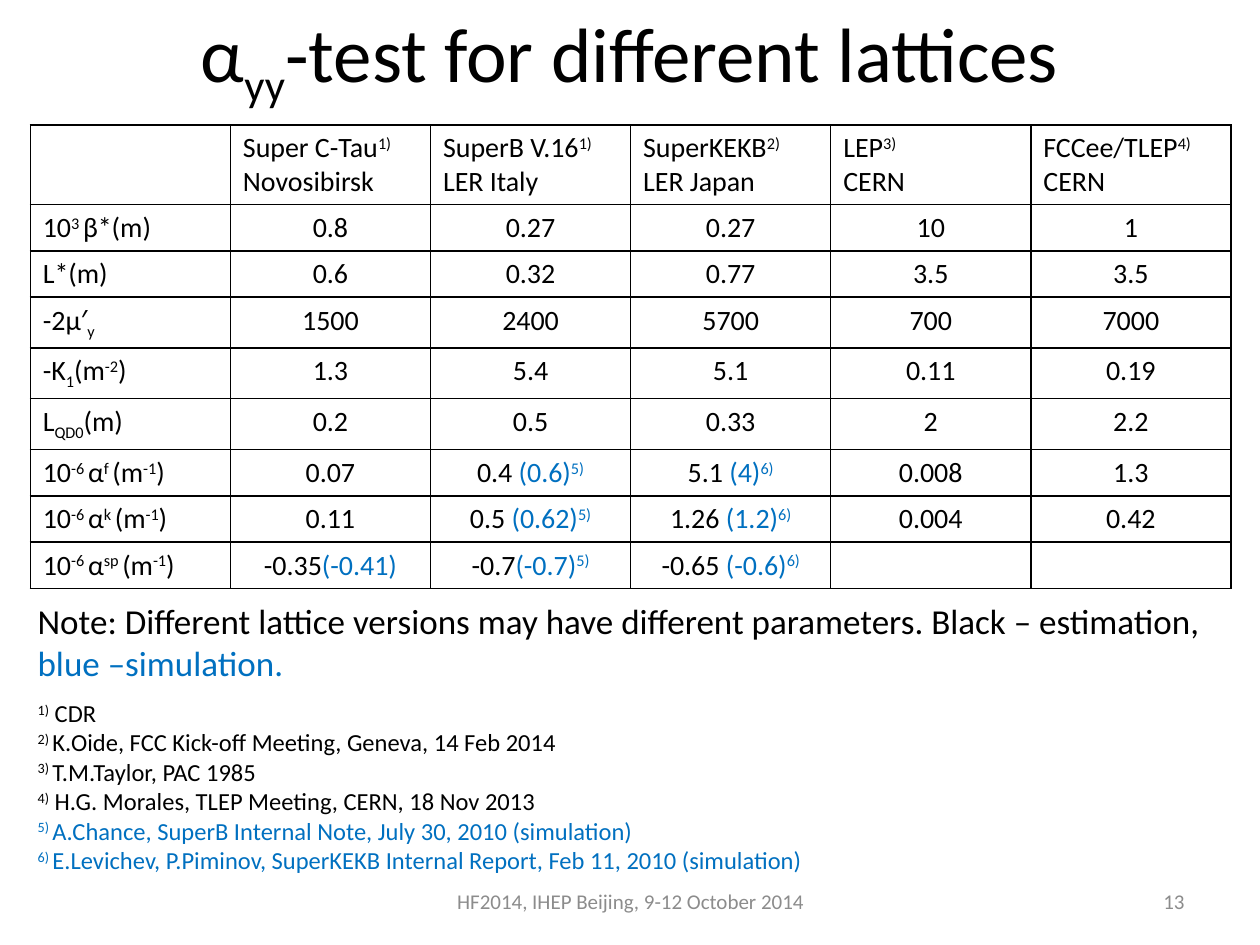
from dataclasses import dataclass
from lxml.etree import SubElement
from pptx import Presentation
from pptx.dml.color import RGBColor
from pptx.enum.text import MSO_ANCHOR, PP_ALIGN
from pptx.oxml.ns import qn
from pptx.slide import Slide
from pptx.util import Inches, Pt

BLACK = RGBColor(0x00, 0x00, 0x00)
WHITE = RGBColor(0xFF, 0xFF, 0xFF)
BLUE = RGBColor(0x00, 0x70, 0xC0)
GREY = RGBColor(0x8C, 0x8C, 0x8C)
BASELINES = {"^": "30000", "_": "-25000"}


@dataclass
class LatticeSlide:
    """Draws text where | splits runs, ~ is blue, ^ is raised and _ is lowered."""

    slide: Slide
    font: str = "Calibri"

    def fill_text(self, frame, lines, size, color=BLACK, align=PP_ALIGN.LEFT):
        for index, line in enumerate(lines):
            paragraph = frame.paragraphs[0] if index == 0 else frame.add_paragraph()
            paragraph.alignment = align
            paragraph.font.size = Pt(size)
            for part in filter(None, line.split("|")):
                ink = BLUE if part.startswith("~") else color
                part = part.removeprefix("~")
                baseline = BASELINES.get(part[0])
                run = paragraph.add_run()
                run.text = part[1:] if baseline else part
                style = {"name": self.font, "size": Pt(size)}
                for key, value in style.items():
                    setattr(run.font, key, value)
                run.font.color.rgb = ink
                if baseline:
                    run.font._element.set("baseline", baseline)

    def text(self, box, lines, size, color=BLACK, align=PP_ALIGN.LEFT, anchor=MSO_ANCHOR.TOP):
        frame = self.slide.shapes.add_textbox(*map(Inches, box)).text_frame
        for key, value in {"word_wrap": True, "vertical_anchor": anchor}.items():
            setattr(frame, key, value)
        self.fill_text(frame, lines, size, color, align)

    def border(self, cell):
        properties = cell._tc.get_or_add_tcPr()
        for side in ("a:lnL", "a:lnR", "a:lnT", "a:lnB"):
            line = SubElement(properties, qn(side), w=str(Pt(1)))
            fill = SubElement(line, qn("a:solidFill"))
            SubElement(fill, qn("a:srgbClr"), val=str(BLACK))

    def table(self, box, rows, heights, size):
        grid = self.slide.shapes.add_table(len(rows), len(rows[0]), *map(Inches, box)).table
        for key in ("first_row", "horz_banding"):
            setattr(grid, key, False)
        for r, (row, height) in enumerate(zip(rows, heights)):
            grid.rows[r].height = Inches(height)
            for c, content in enumerate(row):
                cell = grid.cell(r, c)
                align = PP_ALIGN.CENTER if r and c else PP_ALIGN.LEFT
                self.border(cell)
                cell.fill.solid()
                cell.fill.fore_color.rgb = WHITE
                self.fill_text(cell.text_frame, content.split("\n"), size, align=align)


HEADINGS = ["", "Super C-Tau|^1)\nNovosibirsk", "SuperB V.16|^1)\nLER Italy",
            "SuperKEKB|^2)\nLER Japan", "LEP|^3)\nCERN", "FCCee/TLEP|^4)\nCERN"]
PARAMETERS = [
    ["10|^3 |β*(m)", "0.8", "0.27", "0.27", "10", "1"],
    ["L*(m)", "0.6", "0.32", "0.77", "3.5", "3.5"],
    ["-2μ′|_y", "1500", "2400", "5700", "700", "7000"],
    ["-K|_1|(m|^-2|)", "1.3", "5.4", "5.1", "0.11", "0.19"],
    ["L|_QD0|(m)", "0.2", "0.5", "0.33", "2", "2.2"],
]
COEFFICIENTS = {
    "f": ["0.07", "0.4 |~(0.6)|~^5)", "5.1 |~(4)|~^6)", "0.008", "1.3"],
    "k": ["0.11", "0.5 |~(0.62)|~^5)", "1.26 |~(1.2)|~^6)", "0.004", "0.42"],
    "sp": ["-0.35|~(-0.41)", "-0.7|~(-0.7)|~^5)", "-0.65 |~(-0.6)|~^6)", "", ""],
}
ALPHA_ROWS = [[f"10|^-6 |α|^{name} |(m|^-1|)", *values] for name, values in COEFFICIENTS.items()]
ROW_HEIGHTS = [0.63] + [0.36] * 2 + [0.4] * 3 + [0.36] * 3
REFERENCES = [
    "|^1)| CDR",
    "|^2) |K.Oide, FCC Kick-off Meeting, Geneva, 14 Feb 2014",
    "|^3) |T.M.Taylor, PAC 1985",
    "|^4)| H.G. Morales, TLEP Meeting, CERN, 18 Nov 2013",
    "|~^5) |~A.Chance, SuperB Internal Note, July 30, 2010 (simulation)",
    "|~^6) |~E.Levichev, P.Piminov, SuperKEKB Internal Report, Feb 11, 2010 (simulation)",
]
NOTE = ("Note: Different lattice versions may have different parameters. "
        "Black – estimation, |~blue –simulation.")

deck = Presentation()
deck.slide_width, deck.slide_height = Inches(10), Inches(7.5)
page = LatticeSlide(deck.slides.add_slide(deck.slide_layouts[6]))
page.text((0.5, 0, 9, 0.92), ["α|_yy|-test for different lattices"], 44,
          align=PP_ALIGN.CENTER, anchor=MSO_ANCHOR.MIDDLE)
page.text((0.2, 5.49, 6.75, 1.51), REFERENCES, 14)
page.text((0.2, 4.71, 9.61, 0.77), [NOTE], 20)
page.table((0.24, 0.99, 9.53, 3.57), [HEADINGS, *PARAMETERS, *ALPHA_ROWS], ROW_HEIGHTS, 16)
page.text((7.17, 6.95, 2.33, 0.4), ["13"], 12, GREY, PP_ALIGN.RIGHT, MSO_ANCHOR.MIDDLE)
page.text((3.42, 6.95, 3.17, 0.4), ["HF2014, IHEP Beijing, 9-12 October 2014"], 12, GREY,
          PP_ALIGN.CENTER, MSO_ANCHOR.MIDDLE)
deck.save("out.pptx")
